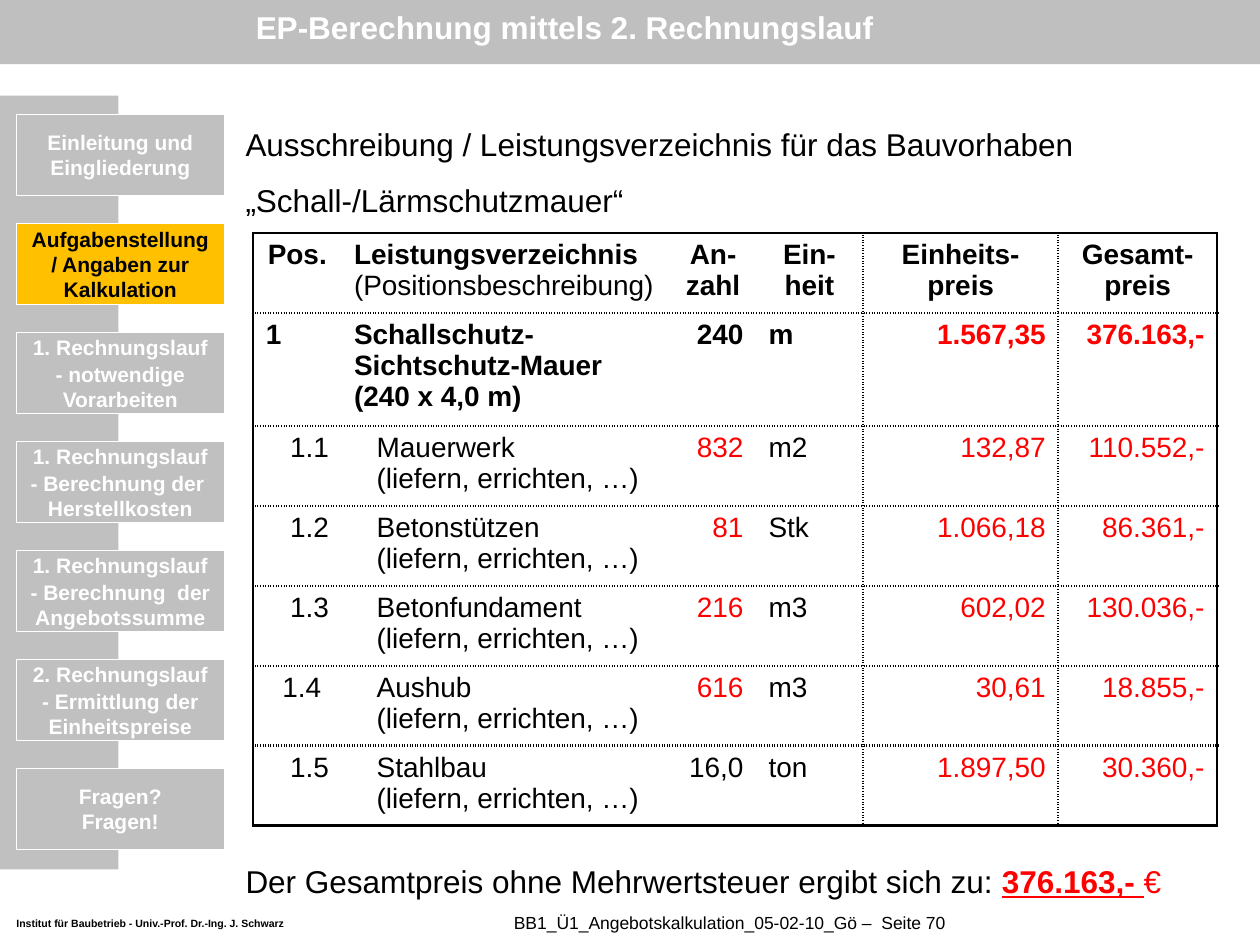
"""Build the slide with the tender price table, the topic navigation and the total price."""
import pptx
import pptx.dml.color
import pptx.enum.shapes
import pptx.enum.text
import pptx.oxml
import pptx.oxml.ns
import pptx.util
from pptx.util import Inches

COLORS = {"black": "000000", "white": "FFFFFF", "red": "FF0000",
          "header": "BFBFBF", "gray": "C0C0C0", "active": "FFC000"}
ALIGN = pptx.enum.text.PP_ALIGN
MIDDLE = pptx.enum.text.MSO_ANCHOR.MIDDLE


def format_text(frame, size, color="black", bold=False, align=ALIGN.LEFT):
    for paragraph in frame.paragraphs:
        paragraph.alignment = align
        for span in paragraph.runs:
            span.font.name = "Arial"
            span.font.size = pptx.util.Pt(size)
            span.font.bold = bold
            span.font.color.rgb = pptx.dml.color.RGBColor.from_string(COLORS[color])


def add_rectangle(page, left, top, width, height, color):
    shape = page.shapes.add_shape(pptx.enum.shapes.MSO_SHAPE.RECTANGLE, Inches(left),
                                  Inches(top), Inches(width), Inches(height))
    shape.shadow.inherit = False
    shape.fill.solid()
    shape.fill.fore_color.rgb = pptx.dml.color.RGBColor.from_string(COLORS[color])
    shape.line.fill.background()
    return shape


deck = pptx.Presentation()
deck.slide_width, deck.slide_height = Inches(10), Inches(7.5)
page = deck.slides.add_slide(deck.slide_layouts[5])

add_rectangle(page, 0, 0, 10, 0.51, "header")
add_rectangle(page, 0, 0.76, 0.94, 6.14, "gray")

title = page.shapes.title
title.left, title.top, title.width, title.height = Inches(2.01), Inches(0.04), Inches(7.95), Inches(0.34)
frame = title.text_frame
frame.text = "EP-Berechnung mittels 2. Rechnungslauf"
frame.margin_left = frame.margin_right = frame.margin_top = frame.margin_bottom = Inches(0.02)
frame.vertical_anchor = MIDDLE
frame.auto_size = pptx.enum.text.MSO_AUTO_SIZE.NONE
format_text(frame, 18, "white", True)
page.shapes.element.append(title.element)

footers = [
    ("Institut für Baubetrieb - Univ.-Prof. Dr.-Ing. J. Schwarz", 0.13, 7.28, 2.15, 0.1, 6, True, ALIGN.LEFT),
    ("BB1_Ü1_Angebotskalkulation_05-02-10_Gö –  Seite 70", 2.76, 7.17, 6.06, 0.31, 10, False, ALIGN.CENTER),
]
for text, left, top, width, height, size, bold, align in footers:
    box = page.shapes.add_textbox(Inches(left), Inches(top), Inches(width), Inches(height))
    frame = box.text_frame
    frame.word_wrap = align == ALIGN.CENTER
    frame.margin_left = frame.margin_right = frame.margin_top = frame.margin_bottom = 0
    frame.vertical_anchor = MIDDLE
    frame.text = text
    format_text(frame, size, bold=bold, align=align)

statements = [
    (0.79, 1.05, ["Ausschreibung / Leistungsverzeichnis für das Bauvorhaben \v„Schall-/Lärmschutzmauer“"]),
    (6.64, 0.55, ["Der Gesamtpreis ohne Mehrwertsteuer ergibt sich zu: ", "376.163,- ", "€"]),
]
for top, height, parts in statements:
    box = page.shapes.add_textbox(Inches(1.85), Inches(top), Inches(7.68), Inches(height))
    box.text_frame.word_wrap = True
    paragraph = box.text_frame.paragraphs[0]
    paragraph.text = parts[0]
    paragraph.line_spacing = 1.5
    for part in parts[1:]:
        paragraph.add_run().text = part
    format_text(box.text_frame, 18)
amount, currency = paragraph.runs[1:]
amount.font.bold = amount.font.underline = True
for span in (amount, currency):
    span.font.color.rgb = pptx.dml.color.RGBColor.from_string(COLORS["red"])

topics = [
    "Einleitung und Eingliederung",
    "Aufgabenstellung / Angaben zur Kalkulation",
    "1. Rechnungslauf\n- notwendige Vorarbeiten",
    "1. Rechnungslauf\n- Berechnung der  Herstellkosten",
    "1. Rechnungslauf\n- Berechnung  der Angebotssumme",
    "2. Rechnungslauf\n- Ermittlung der Einheitspreise",
    "Fragen?\vFragen!",
]
active_topic = 1
topic_pitch = (6.1 - 0.91) / (len(topics) - 1)
for index, topic in enumerate(topics):
    active = index == active_topic
    button = add_rectangle(page, 0.13, 0.91 + index * topic_pitch, 1.65, 0.64, "active" if active else "gray")
    button.line.color.rgb = pptx.dml.color.RGBColor.from_string(COLORS["white"])
    button.line.width = pptx.util.Pt(0.75)
    frame = button.text_frame
    frame.word_wrap = True
    frame.vertical_anchor = MIDDLE
    frame.text = topic
    format_text(frame, 12, "black" if active else "white", True, ALIGN.CENTER)
    for paragraph in frame.paragraphs[1:]:
        paragraph.space_before = pptx.util.Pt(1)

detail = "\n(liefern, errichten, …)"
rows = [
    ["Pos.", "Leistungsverzeichnis\n(Positionsbeschreibung)", "An-zahl", "Ein-heit", "Einheits-preis", "Gesamt-preis"],
    ["1", "Schallschutz-Sichtschutz-Mauer\n(240 x 4,0 m)", "240", "m", "1.567,35", "376.163,-"],
    ["1.1", "Mauerwerk" + detail, "832", "m2", "132,87", "110.552,-"],
    ["1.2", "Betonstützen" + detail, "81", "Stk", "1.066,18", "86.361,-"],
    ["1.3", "Betonfundament" + detail, "216", "m3", "602,02", "130.036,-"],
    ["1.4 ", "Aushub" + detail, "616", "m3", "30,61", "18.855,-"],
    ["1.5", "Stahlbau" + detail, "16,0", "ton", "1.897,50", "30.360,-"],
]
column_widths = [0.7, 2.61, 0.68, 0.85, 1.55, 1.26]
last_row, last_column = len(rows) - 1, len(column_widths) - 1
table = page.shapes.add_table(len(rows), len(column_widths), Inches(2.01), Inches(1.85),
                              Inches(7.65), Inches(4.7)).table
table.first_row = table.horz_banding = False
for column, width in zip(table.columns, column_widths):
    column.width = Inches(width)

for r, values in enumerate(rows):
    table.rows[r].height = Inches(0.9 if r == 1 else 0.63)
    for c, value in enumerate(values):
        cell = table.cell(r, c)
        cell.text = value
        if r == 0:
            align = ALIGN.LEFT if c == 1 else ALIGN.CENTER
        else:
            align = ALIGN.RIGHT if c in (2, 4, 5) or (c == 0 and r > 1) else ALIGN.LEFT
        calculated = r > 0 and c >= 4 or c == 2 and 1 < r < last_row
        format_text(cell.text_frame, 16, "red" if calculated else "black", r < 2, align)
        if c == 1 and r == 0:
            cell.text_frame.paragraphs[1].runs[0].font.bold = False
        if c == 1 and r > 1:
            for paragraph in cell.text_frame.paragraphs:
                paragraph.font.size = pptx.util.Pt(16)
                paragraph._p.get_or_add_pPr().set("marL", str(Inches(0.18)))

        borders = {
            "L": "solid" if c == 0 else "sysDot" if c >= 4 else None,
            "R": "solid" if c == last_column else "sysDot" if c >= 3 else None,
            "T": "solid" if r == 0 else "sysDot",
            "B": "solid" if r == last_row else "sysDot",
        }
        properties = cell._tc.get_or_add_tcPr()
        for side, dash in borders.items():
            stroke = "<a:noFill/>"
            if dash:
                stroke = (f'<a:solidFill><a:srgbClr val="{COLORS["black"]}"/></a:solidFill>'
                          f'<a:prstDash val="{dash}"/>')
            properties.append(pptx.oxml.parse_xml(
                f'<a:ln{side} {pptx.oxml.ns.nsdecls("a")} w="{pptx.util.Pt(1.5)}">{stroke}</a:ln{side}>'))
        cell.fill.background()

deck.save("out.pptx")
